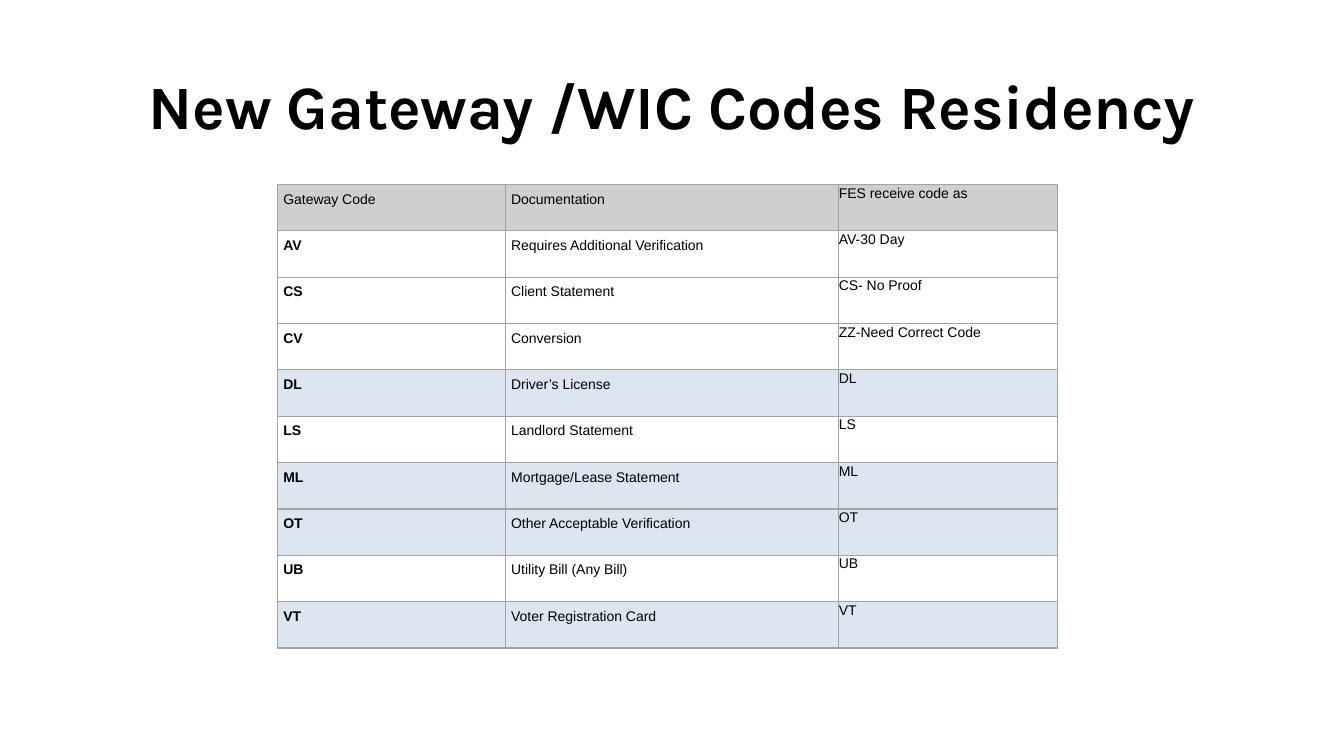
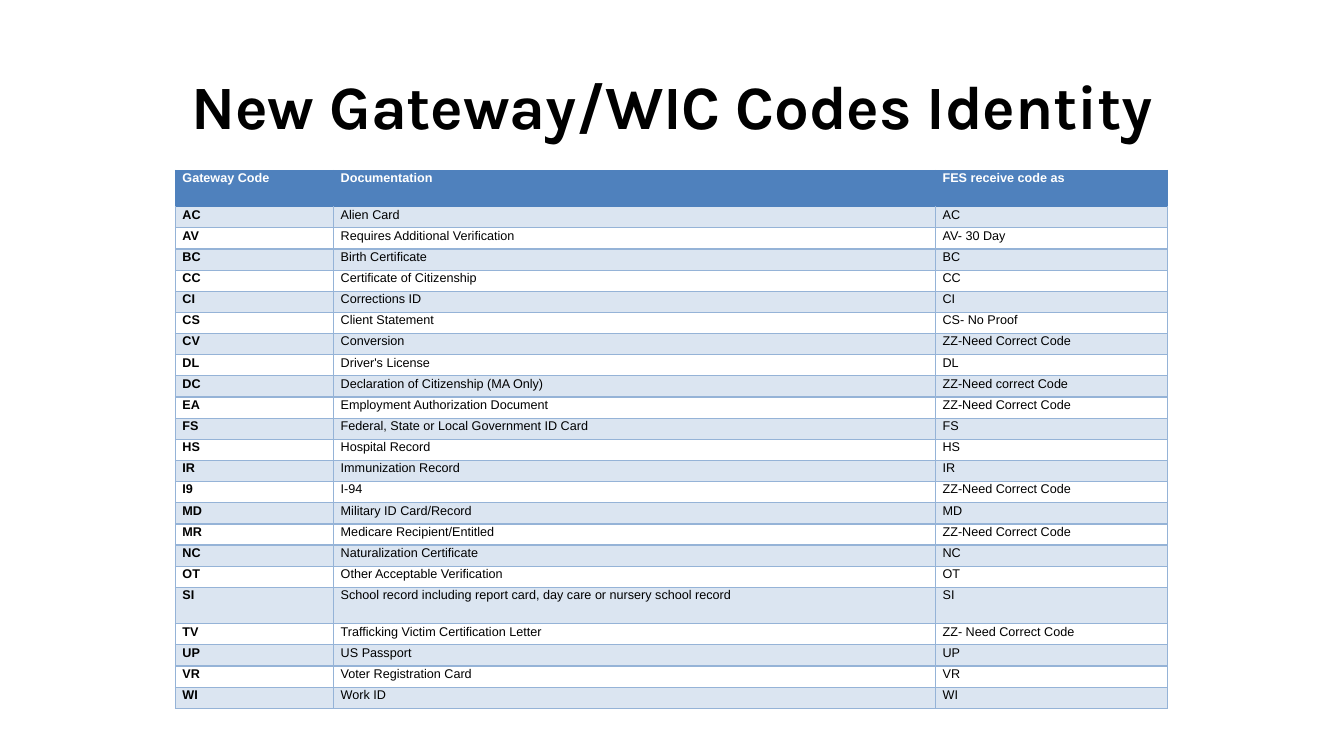
"""Builds two slides of Gateway/WIC code tables for residency and identity."""
from dataclasses import dataclass

from lxml import etree
from pptx import Presentation
from pptx.dml.color import RGBColor
from pptx.enum.text import MSO_ANCHOR, PP_ALIGN
from pptx.oxml.ns import qn
from pptx.util import Inches, Pt

CENTER = PP_ALIGN.CENTER
MIDDLE = MSO_ANCHOR.MIDDLE
BLANK_LAYOUT = 6


@dataclass(frozen=True)
class Theme:
    title_font: str = "Karla"
    body_font: str = "Arial"
    title_size: int = 44
    title_tracking: int = -20
    line_spacing: float = 1.07
    border_width: int = 1
    black: str = "000000"
    white: str = "FFFFFF"
    gray: str = "D0CECE"
    gray_line: str = "A3A3A3"
    pale_blue: str = "DCE6F1"
    band_blue: str = "DBE5F1"
    blue: str = "4F81BD"
    blue_line: str = "95B3D7"


THEME = Theme()

HEADER = ("Gateway Code", "Documentation", "FES receive code as")

RESIDENCY_ROWS = [
    ("AV", "Requires Additional Verification", "AV-30 Day"),
    ("CS", "Client Statement", "CS- No Proof"),
    ("CV", "Conversion", "ZZ-Need Correct Code"),
    ("DL", "Driver’s License", "DL"),
    ("LS", "Landlord Statement", "LS"),
    ("ML", "Mortgage/Lease Statement", "ML"),
    ("OT", "Other Acceptable Verification", "OT"),
    ("UB", "Utility Bill (Any Bill)", "UB"),
    ("VT", "Voter Registration Card", "VT"),
]

IDENTITY_ROWS = [
    ("AC", "Alien Card", "AC"),
    ("AV", "Requires Additional Verification", "AV- 30 Day"),
    ("BC", "Birth Certificate", "BC"),
    ("CC", "Certificate of Citizenship", "CC"),
    ("CI", "Corrections ID", "CI"),
    ("CS", "Client Statement", "CS- No Proof"),
    ("CV", "Conversion", "ZZ-Need Correct Code"),
    ("DL", "Driver's License", "DL"),
    ("DC", "Declaration of Citizenship (MA Only)", "ZZ-Need correct Code"),
    ("EA", "Employment Authorization Document", "ZZ-Need Correct Code"),
    ("FS", "Federal, State or Local Government ID Card", "FS"),
    ("HS", "Hospital Record", "HS"),
    ("IR", "Immunization Record", "IR"),
    ("I9", "I-94", "ZZ-Need Correct Code"),
    ("MD", "Military ID Card/Record", "MD"),
    ("MR", "Medicare Recipient/Entitled", "ZZ-Need Correct Code"),
    ("NC", "Naturalization Certificate", "NC"),
    ("OT", "Other Acceptable Verification", "OT"),
    ("SI", "School record including report card, day care or nursery school record", "SI"),
    ("TV", "Trafficking Victim Certification Letter", "ZZ- Need Correct Code"),
    ("UP", "US Passport", "UP"),
    ("VR", "Voter Registration Card", "VR"),
    ("WI", "Work ID", "WI"),
]

SLIDES = [
    {
        "title": "New Gateway /WIC Codes Residency",
        "rows": RESIDENCY_ROWS,
        "shaded": {"DL", "ML", "OT", "VT"},
        "position": (2.75, 1.83),
        "columns": (2.26, 3.31, 2.17),
        "row_height": 0.46,
        "tall_rows": {},
        "margins": ((0.06, 0.06), (0.06, 0.06), (0, 0)),
        "size": 10,
        "header_bold": False,
        "header_text": THEME.black,
        "header_fill": THEME.gray,
        "header_line": THEME.gray_line,
        "shade": THEME.pale_blue,
        "line": THEME.gray_line,
    },
    {
        "title": "New Gateway/WIC Codes Identity",
        "rows": IDENTITY_ROWS,
        "shaded": {row[0] for row in IDENTITY_ROWS[::2]},
        "position": (1.74, 1.69),
        "columns": (1.57, 5.97, 2.3),
        "row_height": 0.21,
        "tall_rows": {"Gateway Code": 0.36, "SI": 0.36},
        "margins": ((0.07, 0),) * 3,
        "size": 9,
        "header_bold": True,
        "header_text": THEME.white,
        "header_fill": THEME.blue,
        "header_line": THEME.blue,
        "shade": THEME.band_blue,
        "line": THEME.blue_line,
    },
]


def style_font(font, name, size, color, bold):
    font.name = name
    font.size = Pt(size)
    font.bold = bold
    font.color.rgb = RGBColor.from_string(color)


def add_title(slide, text):
    box = slide.shapes.add_textbox(Inches(0.22), Inches(0.67), Inches(12.89), Inches(0.74))
    frame = box.text_frame
    frame.word_wrap = True
    frame.vertical_anchor = MIDDLE
    frame.margin_left = frame.margin_right = frame.margin_top = frame.margin_bottom = 0
    paragraph = frame.paragraphs[0]
    paragraph.alignment = CENTER
    run = paragraph.add_run()
    run.text = text
    style_font(paragraph.font, THEME.title_font, THEME.title_size, THEME.black, True)
    style_font(run.font, THEME.title_font, THEME.title_size, THEME.black, True)
    run._r.get_or_add_rPr().set("spc", str(THEME.title_tracking))


def set_borders(cell, color, top_color):
    properties = cell._tc.get_or_add_tcPr()
    for side in ("lnL", "lnR", "lnT", "lnB"):
        line = etree.SubElement(properties, qn(f"a:{side}"), w=str(Pt(THEME.border_width)))
        fill = etree.SubElement(line, qn("a:solidFill"))
        etree.SubElement(fill, qn("a:srgbClr"), val=top_color if side == "lnT" else color)


def fill_cell(cell, text, margins, size, color, bold, fill):
    cell.margin_left = cell.margin_right = Inches(margins[0])
    cell.margin_top = cell.margin_bottom = Inches(margins[1])
    cell.text = text
    paragraph = cell.text_frame.paragraphs[0]
    paragraph.line_spacing = THEME.line_spacing
    for font in (paragraph.font, paragraph.runs[0].font):
        style_font(font, THEME.body_font, size, color, bold)
    if fill:
        cell.fill.solid()
        cell.fill.fore_color.rgb = RGBColor.from_string(fill)
    else:
        cell.fill.background()


def add_code_table(slide, content):
    rows = [HEADER] + content["rows"]
    heights = [content["tall_rows"].get(row[0], content["row_height"]) for row in rows]
    left, top = content["position"]
    table = slide.shapes.add_table(
        len(rows), len(HEADER), Inches(left), Inches(top),
        Inches(sum(content["columns"])), Inches(sum(heights)),
    ).table
    table.horz_banding = False
    table.first_row = False
    for column, width in zip(table.columns, content["columns"]):
        column.width = Inches(width)
    for row_index, (row, height) in enumerate(zip(rows, heights)):
        table.rows[row_index].height = Inches(height)
        is_header = row_index == 0
        line = content["header_line"] if is_header else content["line"]
        top_line = content["header_line"] if row_index <= 1 else line
        color = content["header_text"] if is_header else THEME.black
        shade = content["shade"] if row[0] in content["shaded"] else None
        fill = content["header_fill"] if is_header else shade
        for column_index, text in enumerate(row):
            cell = table.cell(row_index, column_index)
            bold = content["header_bold"] if is_header else column_index == 0
            set_borders(cell, line, top_line)
            fill_cell(cell, text, content["margins"][column_index],
                      content["size"], color, bold, fill)


def main():
    presentation = Presentation()
    presentation.slide_width = Inches(13.33)
    presentation.slide_height = Inches(7.5)
    for content in SLIDES:
        slide = presentation.slides.add_slide(presentation.slide_layouts[BLANK_LAYOUT])
        add_title(slide, content["title"])
        add_code_table(slide, content)
    presentation.save("out.pptx")


if __name__ == "__main__":
    main()
